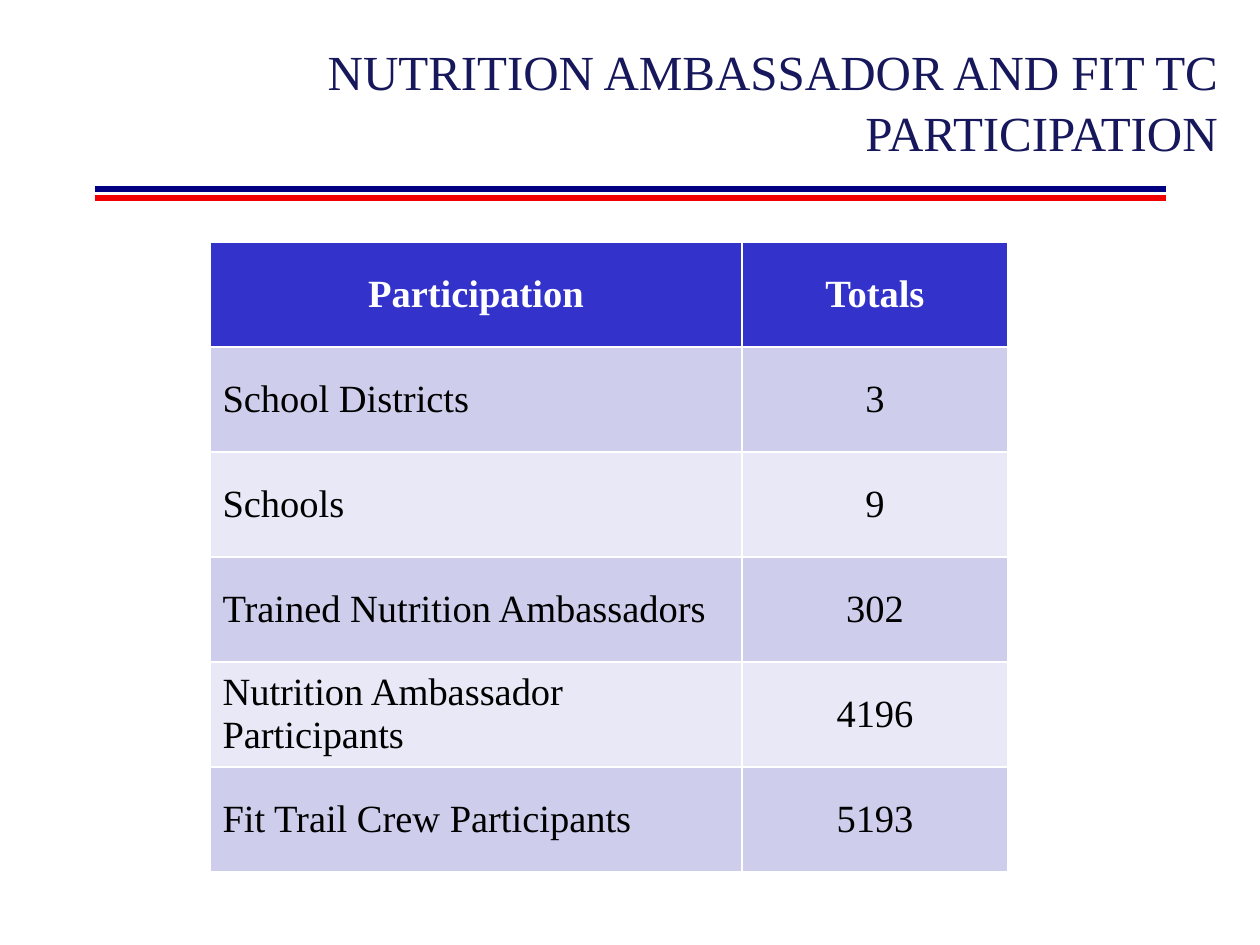
from lxml.etree import SubElement
from pptx import Presentation
from pptx.dml.color import RGBColor
from pptx.enum.shapes import MSO_CONNECTOR
from pptx.enum.text import MSO_ANCHOR, PP_ALIGN
from pptx.oxml.ns import qn
from pptx.util import Inches, Pt

NAVY = RGBColor(0x00, 0x00, 0x80)
RED = RGBColor(0xF0, 0x00, 0x00)
TITLE_BLUE = RGBColor(0x17, 0x17, 0x5C)
HEADER_BLUE = RGBColor(0x33, 0x33, 0xCC)
BAND_DARK = RGBColor(0xCE, 0xCE, 0xEC)
BAND_LIGHT = RGBColor(0xE8, 0xE8, 0xF6)
WHITE = RGBColor(0xFF, 0xFF, 0xFF)
BLACK = RGBColor(0x00, 0x00, 0x00)

PARTICIPATION = [
    ("Participation", "Totals"),
    ("School Districts", "3"),
    ("Schools", "9"),
    ("Trained Nutrition Ambassadors", "302"),
    ("Nutrition Ambassador Participants", "4196"),
    ("Fit Trail Crew Participants", "5193"),
]


def px(length):
    return Inches(length / 126)


def write(frame, text, size=22, color=BLACK, bold=False, align=PP_ALIGN.LEFT,
          spacing=None, font="Times New Roman"):
    frame.word_wrap = True
    paragraph = frame.paragraphs[0]
    paragraph.alignment = align
    paragraph.line_spacing = spacing
    run = paragraph.add_run()
    run.text = text
    run.font.name = font
    run.font.size = Pt(size)
    run.font.bold = bold
    run.font.color.rgb = color


class Deck:
    """Holds the presentation style and the slide being built."""

    def __init__(self, width, height):
        self.presentation = Presentation()
        self.presentation.slide_width = px(width)
        self.presentation.slide_height = px(height)
        self.slide = self.presentation.slides.add_slide(self.presentation.slide_layouts[6])

    def rule(self, left, right, y, color, weight=3):
        stripe = self.slide.shapes.add_connector(
            MSO_CONNECTOR.STRAIGHT, px(left), px(y), px(right), px(y))
        stripe.line.color.rgb = color
        stripe.line.width = Pt(weight)
        SubElement(stripe._element.spPr, qn("a:effectLst"))

    def title(self, left, top, width, height, text):
        heading = self.slide.shapes.add_textbox(px(left), px(top), px(width), px(height))
        write(heading.text_frame, text, size=28, color=TITLE_BLUE,
              align=PP_ALIGN.RIGHT, spacing=1.05)

    def table(self, left, top, widths, row_height, rows):
        grid = self.slide.shapes.add_table(
            len(rows), len(widths), px(left), px(top),
            px(sum(widths)), px(row_height * len(rows))).table
        for column, width in zip(grid.columns, widths):
            column.width = px(width)
        for r, values in enumerate(rows):
            header = r == 0
            band = BAND_DARK if r % 2 else BAND_LIGHT
            for c, value in enumerate(values):
                cell = grid.cell(r, c)
                cell.vertical_anchor = MSO_ANCHOR.MIDDLE
                cell.fill.solid()
                cell.fill.fore_color.rgb = HEADER_BLUE if header else band
                write(cell.text_frame, value, bold=header,
                      color=WHITE if header else BLACK,
                      align=PP_ALIGN.CENTER if header or c else PP_ALIGN.LEFT)

    def save(self):
        self.presentation.save("out.pptx")


def main():
    deck = Deck(1260, 945)
    for y, color in ((189, NAVY), (198, RED)):
        deck.rule(95, 1166, y, color)
    deck.title(23, 32, 1207, 131, "NUTRITION AMBASSADOR AND FIT TC PARTICIPATION")
    deck.table(210, 242, (532, 266), 105, PARTICIPATION)
    deck.save()


if __name__ == "__main__":
    main()
